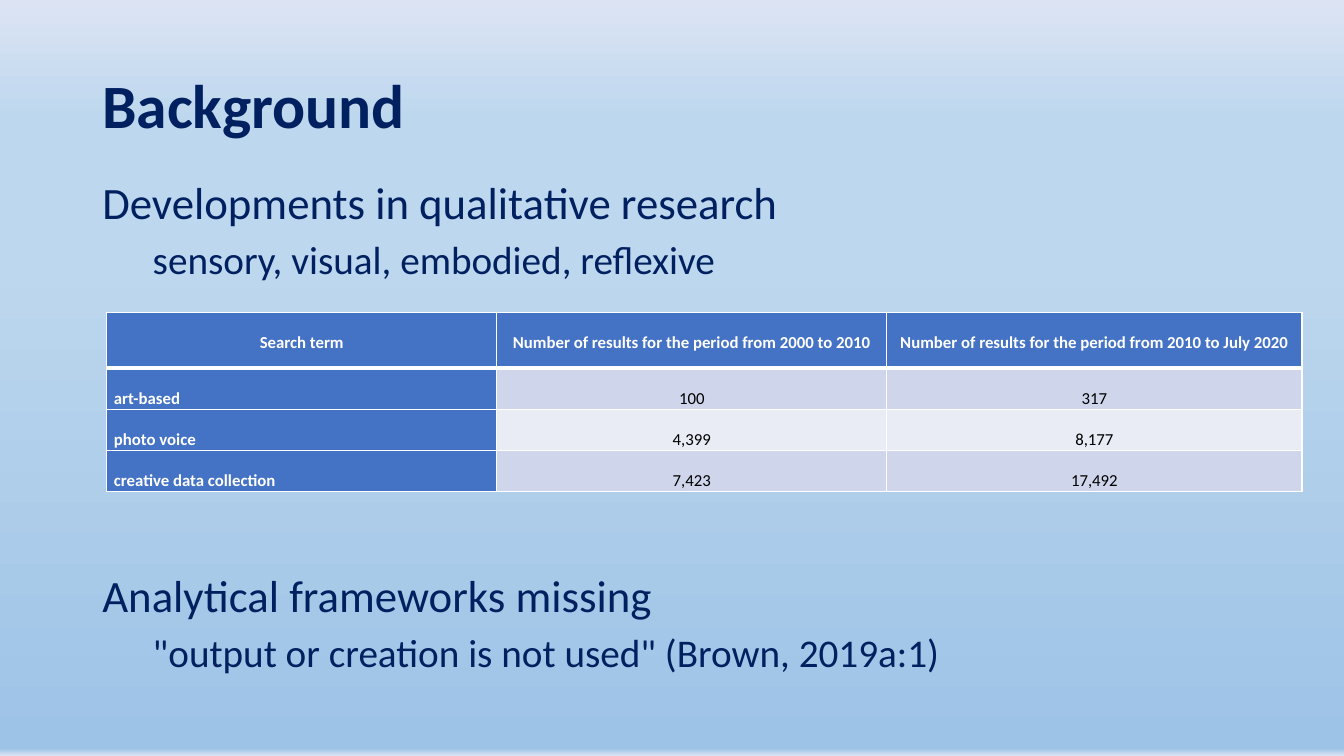
from copy import deepcopy
from dataclasses import dataclass

from lxml import etree
from pptx import Presentation
from pptx.dml.color import RGBColor
from pptx.enum.text import MSO_ANCHOR, PP_ALIGN
from pptx.oxml.ns import qn
from pptx.slide import Slide
from pptx.table import _Cell
from pptx.text.text import _Paragraph
from pptx.util import Cm, Pt

LEFT, CENTER = PP_ALIGN.LEFT, PP_ALIGN.CENTER
TOP, MIDDLE = MSO_ANCHOR.TOP, MSO_ANCHOR.MIDDLE

FONT = "Calibri"
COLORS = {
    "navy": "002060",
    "white": "FFFFFF",
    "black": "000000",
    "header": "4472C4",
    "odd_row": "CFD5EA",
    "even_row": "E9EBF5",
    "pale": "DCE4F4",
    "sky": "BDD7EE",
    "blue": "9DC3E6",
}
BACKGROUND_STOPS = [(0, "pale"), (0.16, "sky"), (0.34, "sky"), (0.99, "blue"), (1, "pale")]

TEXT_LEFT, TEXT_WIDTH = 2.33, 29.21
FRAME_FORMAT = {"word_wrap": True}
CELL_FORMAT = {
    "margin_left": Cm(0.18),
    "margin_right": Cm(0.18),
    "margin_top": 0,
    "margin_bottom": 0,
    "vertical_anchor": TOP,
}

TABLE_LEFT, TABLE_TOP = 2.69, 7.87
COLUMN_WIDTHS = [9.83, 9.83, 10.46]
HEADER_HEIGHT, ROW_HEIGHT = 1.4, 1.04
THIN, THICK = 1, 3
RESULTS = [
    (
        "Search term",
        "Number of results for the period from 2000 to 2010",
        "Number of results for the period from 2010 to July 2020",
    ),
    ("art-based", "100", "317"),
    ("photo voice", "4,399", "8,177"),
    ("creative data collection", "7,423", "17,492"),
]


@dataclass
class Line:
    text: str
    size: int
    bold: bool = False
    indent: float = 0
    space_before: float = 0
    line_spacing: float = 1
    align: PP_ALIGN = LEFT
    color: str = "navy"


@dataclass
class TextBlock:
    top: float
    height: float
    lines: list[Line]
    anchor: MSO_ANCHOR = TOP


def topic(heading: str, detail: str) -> list[Line]:
    """A heading with an indented line under it."""
    return [Line(heading, 32), Line(detail, 28, indent=1.27, space_before=5)]


TEXT_BLOCKS = [
    TextBlock(1.65, 2.18, [Line("Background", 44, bold=True, line_spacing=0.9)], MIDDLE),
    TextBlock(4.27, 3, topic("Developments in qualitative research",
                             "sensory, visual, embodied, reflexive")),
    TextBlock(14.17, 3, topic("Analytical frameworks missing",
                              '"output or creation is not used" (Brown, 2019a:1)')),
]


def rgb(name: str) -> RGBColor:
    return RGBColor.from_string(COLORS[name])


def apply_format(target: object, values: dict[str, object]) -> None:
    for name, value in values.items():
        setattr(target, name, value)


def write_line(paragraph: _Paragraph, line: Line) -> None:
    apply_format(paragraph, {
        "alignment": line.align,
        "line_spacing": line.line_spacing,
        "space_before": Pt(line.space_before),
    })
    if line.indent:
        paragraph._p.get_or_add_pPr().set("marL", str(Cm(line.indent)))
    run = paragraph.add_run()
    run.text = line.text
    apply_format(run.font, {"name": FONT, "size": Pt(line.size), "bold": line.bold})
    run.font.color.rgb = rgb(line.color)


def paint_background(slide: Slide) -> None:
    fill = slide.background.fill
    fill.gradient()
    fill.gradient_angle = 270
    stop_list = slide._element.find(f".//{qn('a:gsLst')}")
    while len(stop_list) < len(BACKGROUND_STOPS):
        stop_list.append(deepcopy(stop_list[0]))
    for stop, (position, color) in zip(fill.gradient_stops, BACKGROUND_STOPS):
        stop.position = position
        stop.color.rgb = rgb(color)


def add_text_block(slide: Slide, block: TextBlock) -> None:
    box = slide.shapes.add_textbox(
        Cm(TEXT_LEFT), Cm(block.top), Cm(TEXT_WIDTH), Cm(block.height))
    frame = box.text_frame
    apply_format(frame, FRAME_FORMAT | {"vertical_anchor": block.anchor})
    for index, line in enumerate(block.lines):
        write_line(frame.add_paragraph() if index else frame.paragraphs[0], line)


def add_borders(cell: _Cell, widths: dict[str, int]) -> None:
    properties = cell._tc.get_or_add_tcPr()
    for side, width in widths.items():
        border = etree.SubElement(properties, qn(f"a:ln{side}"), w=str(Pt(width)))
        fill = etree.SubElement(border, qn("a:solidFill"))
        etree.SubElement(fill, qn("a:srgbClr"), val=COLORS["white"])


def fill_cell(cell: _Cell, text: str, row: int, column: int) -> None:
    is_heading = row == 0 or column == 0
    apply_format(cell, CELL_FORMAT)
    add_borders(cell, {
        "L": THIN,
        "R": THIN,
        "T": THICK if row == 1 else THIN,
        "B": THICK if row == 0 else THIN,
    })
    cell.fill.solid()
    band = "odd_row" if row % 2 else "even_row"
    cell.fill.fore_color.rgb = rgb("header" if is_heading else band)
    write_line(cell.text_frame.paragraphs[0], Line(
        text, 12, bold=is_heading, line_spacing=2,
        align=LEFT if row and column == 0 else CENTER,
        color="white" if is_heading else "black"))


def add_results_table(slide: Slide) -> None:
    heights = [HEADER_HEIGHT] + [ROW_HEIGHT] * (len(RESULTS) - 1)
    table = slide.shapes.add_table(
        len(RESULTS), len(COLUMN_WIDTHS), Cm(TABLE_LEFT), Cm(TABLE_TOP),
        Cm(sum(COLUMN_WIDTHS)), Cm(sum(heights))).table
    for column, width in zip(table.columns, COLUMN_WIDTHS):
        column.width = Cm(width)
    for row, height in zip(table.rows, heights):
        row.height = Cm(height)
    for row_index, texts in enumerate(RESULTS):
        for column_index, text in enumerate(texts):
            fill_cell(table.cell(row_index, column_index), text, row_index, column_index)


def main() -> None:
    presentation = Presentation()
    presentation.slide_width, presentation.slide_height = Cm(33.87), Cm(19.05)
    slide = presentation.slides.add_slide(presentation.slide_layouts[6])
    paint_background(slide)
    for block in TEXT_BLOCKS:
        add_text_block(slide, block)
    add_results_table(slide)
    presentation.save("out.pptx")


if __name__ == "__main__":
    main()
